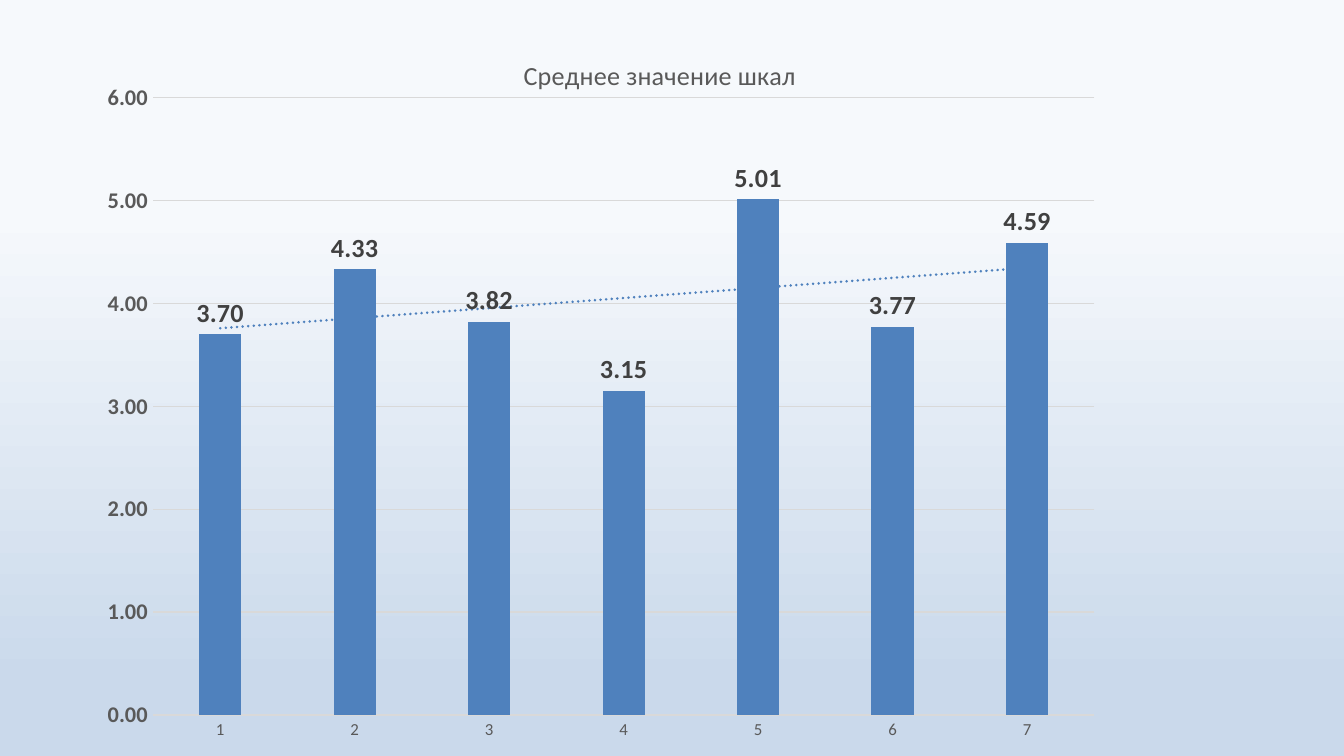
"""Build a slide with a column chart of mean scale values and a linear trend."""
from lxml.etree import SubElement
from pptx import Presentation
from pptx.chart.data import CategoryChartData
from pptx.dml.color import RGBColor
from pptx.enum.chart import XL_CHART_TYPE, XL_LABEL_POSITION, XL_TICK_MARK
from pptx.oxml import parse_xml
from pptx.oxml.ns import nsdecls, qn
from pptx.util import Inches, Pt

SKY = RGBColor(0xF6, 0xF9, 0xFC)
HAZE = RGBColor(0xCA, 0xD9, 0xEB)
BLUE = RGBColor(0x4F, 0x81, 0xBD)
GRID = RGBColor(0xD9, 0xD9, 0xD9)
GREY = RGBColor(0x59, 0x59, 0x59)
DARK = RGBColor(0x40, 0x40, 0x40)
BLACK = RGBColor(0, 0, 0)
MEANS = [3.70, 4.33, 3.82, 3.15, 5.01, 3.77, 4.59]
PLOT_AREA = {"layoutTarget": "inner", "xMode": "edge", "yMode": "edge",
             "x": 0.08, "y": 0.092, "w": 0.78, "h": 0.851}


def set_font(font, size, color, bold=False):
    font.name = "Calibri"
    font.size = Pt(size)
    font.bold = bold
    font.color.rgb = color


def set_line(line, color):
    line.color.rgb = color
    line.width = Pt(0.75)


deck = Presentation()
deck.slide_width = Inches(10)
deck.slide_height = Inches(10 * 9 / 16)
page = deck.slides.add_slide(deck.slide_layouts[6])

backdrop = page.background.fill
backdrop.gradient()
backdrop.gradient_angle = 270
for stop, color, position in zip(backdrop.gradient_stops, (SKY, HAZE), (0.28, 0.9)):
    stop.color.rgb = color
    stop.position = position

data = CategoryChartData(number_format="0.00")
data.categories = [str(number) for number in range(1, len(MEANS) + 1)]
data.add_series("Series 1", MEANS)
chart = page.shapes.add_chart(
    XL_CHART_TYPE.COLUMN_CLUSTERED,
    Inches(0.42), Inches(0.23), Inches(8.98), Inches(5.4), data,
).chart
set_font(chart.font, 10, BLACK)
chart.has_legend = False

title = chart.chart_title
title.include_in_layout = False
title.text_frame.text = "Среднее значение шкал"
set_font(title.text_frame.paragraphs[0].font, 14, GREY)

category_axis = chart.category_axis
category_axis.major_tick_mark = XL_TICK_MARK.NONE
set_font(category_axis.tick_labels.font, 9, GREY)
set_line(category_axis.format.line, GRID)

value_axis = chart.value_axis
value_axis.minimum_scale = 0
value_axis.maximum_scale = 6
value_axis.major_unit = 1
value_axis.major_tick_mark = XL_TICK_MARK.NONE
value_axis.format.line.fill.background()
value_axis.tick_labels.number_format = "0.00"
value_axis.tick_labels.number_format_is_linked = False
set_font(value_axis.tick_labels.font, 12, GREY, bold=True)
set_line(value_axis.major_gridlines.format.line, GRID)

plot = chart.plots[0]
plot.gap_width = 219
plot.overlap = -27
plot.vary_by_categories = False
series = plot.series[0]
series.format.fill.solid()
series.format.fill.fore_color.rgb = BLUE

labels = series.data_labels
labels.show_value = True
labels.position = XL_LABEL_POSITION.OUTSIDE_END
labels.number_format = "0.00"
labels.number_format_is_linked = False
set_font(labels.font, 14, DARK, bold=True)

trend = parse_xml(
    f'<c:trendline {nsdecls("c", "a")}><c:spPr><a:ln w="{Pt(1.5)}" cap="rnd">'
    f'<a:solidFill><a:srgbClr val="{BLUE}"/></a:solidFill><a:prstDash val="sysDot"/>'
    '</a:ln></c:spPr><c:trendlineType val="linear"/>'
    '<c:dispRSqr val="0"/><c:dispEq val="0"/></c:trendline>'
)
series._element.find(qn("c:cat")).addprevious(trend)

plot_area = chart._chartSpace.chart.plotArea
for layout in plot_area.findall(qn("c:layout")):
    plot_area.remove(layout)
layout = parse_xml(f'<c:layout {nsdecls("c")}><c:manualLayout/></c:layout>')
for name, value in PLOT_AREA.items():
    SubElement(layout[0], qn(f"c:{name}")).set("val", str(value))
plot_area.insert(0, layout)

deck.save("out.pptx")
